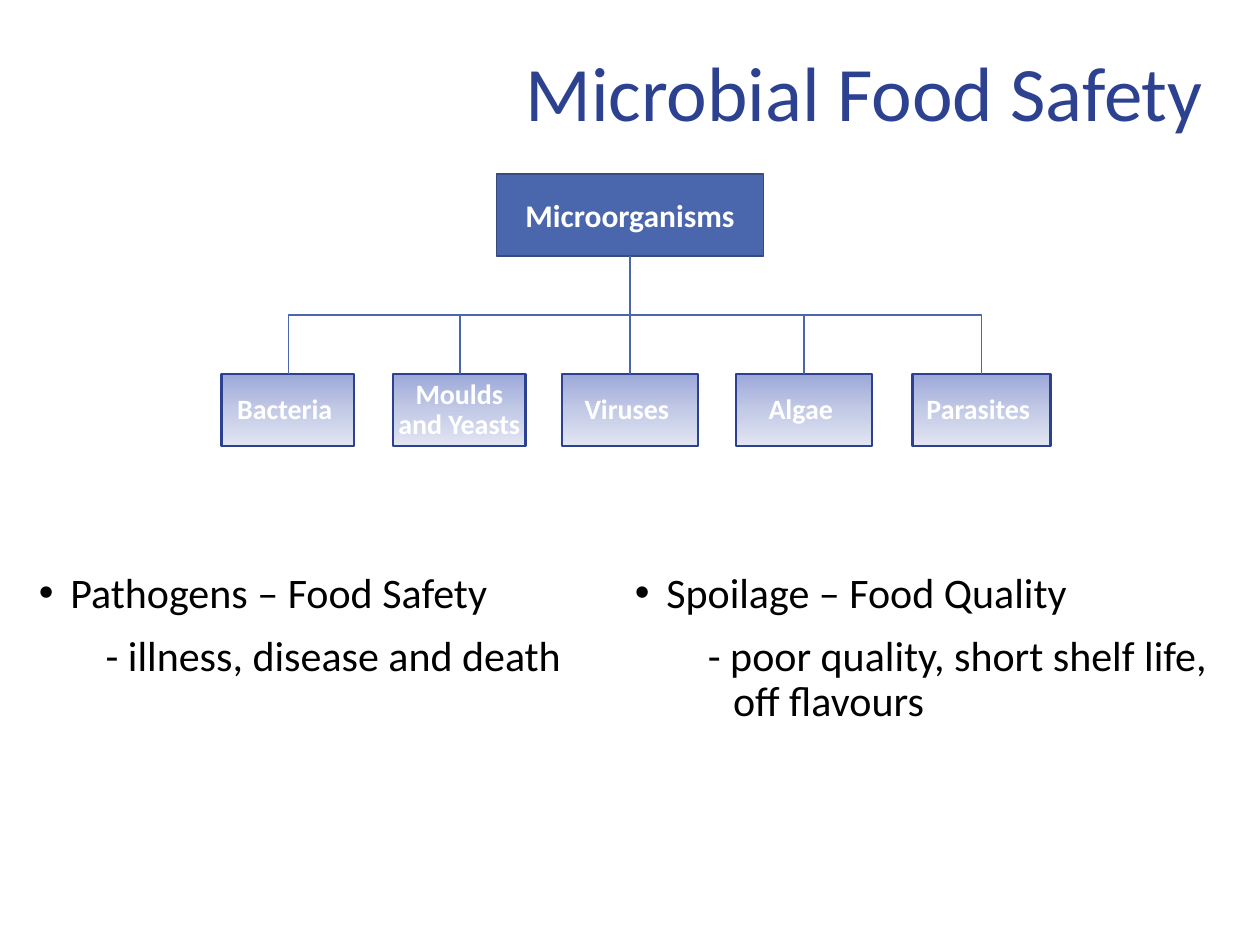
from copy import deepcopy

from pptx import Presentation
from pptx.dml.color import RGBColor
from pptx.enum.shapes import MSO_CONNECTOR, MSO_SHAPE
from pptx.enum.text import MSO_ANCHOR, PP_ALIGN
from pptx.oxml.ns import qn
from pptx.oxml.xmlchemy import OxmlElement
from pptx.util import Inches, Pt

COLORS = {
    "title": "2D4191",
    "body": "000000",
    "label": "FFFFFF",
    "root": "4A66AC",
    "root_edge": "374B7F",
    "branch_edge": "2D4191",
    "connector": "4A66AC",
    "fade_top": "9CA8D9",
    "fade_middle": "C3CAE6",
    "fade_bottom": "E2E5F2",
}


def color(name):
    return RGBColor.from_string(COLORS[name])


def write(paragraph, text, *, size, ink, bold=False, align=PP_ALIGN.LEFT,
          spacing=0.9, before=0, margin=0, indent=0, bullet=None):
    """Fill a paragraph; margin and indent are in inches, before in points."""
    properties = paragraph._p.get_or_add_pPr()
    properties.set("marL", str(Inches(margin)))
    properties.set("indent", str(Inches(indent)))
    if bullet:
        bullet_font = OxmlElement("a:buFont")
        bullet_font.set("typeface", "Arial")
        mark = OxmlElement("a:buChar")
        mark.set("char", bullet)
        properties.extend([bullet_font, mark])
    paragraph.alignment = align
    paragraph.line_spacing = spacing
    paragraph.space_before = Pt(before)
    run = paragraph.add_run()
    run.text = text
    run.font.name = "Calibri"
    run.font.size = Pt(size)
    run.font.bold = bold
    run.font.color.rgb = color(ink)


class SlideBuilder:
    """Holds the slide and the shared look of its elements."""

    def __init__(self, slide):
        self.shapes = slide.shapes

    def text_box(self, left, top, width, height):
        box = self.shapes.add_textbox(
            Inches(left), Inches(top), Inches(width), Inches(height))
        box.text_frame.word_wrap = True
        return box.text_frame

    def title(self, text):
        frame = self.text_box(1.03, 0.39, 8.62, 1.45)
        write(frame.paragraphs[0], text, size=44, ink="title",
              align=PP_ALIGN.RIGHT)

    def point(self, left, width, height, heading, detail, margin, indent):
        """Bulleted heading with an indented detail below it."""
        frame = self.text_box(left, 4.49, width, height)
        write(frame.paragraphs[0], heading, size=24, ink="body",
              margin=0.25, indent=-0.25, bullet="•")
        write(frame.add_paragraph(), detail, size=24, ink="body", before=10,
              margin=margin, indent=indent)

    def box(self, left, top, width, height, text, *, size, edge, edge_width,
            spacing=1.0, inset=0.1):
        box = self.shapes.add_shape(
            MSO_SHAPE.RECTANGLE,
            Inches(left), Inches(top), Inches(width), Inches(height))
        box.shadow.inherit = False
        box.line.color.rgb = color(edge)
        box.line.width = Pt(edge_width)
        frame = box.text_frame
        frame.word_wrap = True
        frame.vertical_anchor = MSO_ANCHOR.MIDDLE
        frame.margin_left = frame.margin_right = Inches(inset)
        frame.margin_top = frame.margin_bottom = Inches(inset / 2)
        write(frame.paragraphs[0], text, size=size, ink="label", bold=True,
              align=PP_ALIGN.CENTER, spacing=spacing)
        return box

    def root(self, text):
        root = self.box(3.94, 1.38, 2.12, 0.65, text, size=18,
                        edge="root_edge", edge_width=1)
        root.fill.solid()
        root.fill.fore_color.rgb = color("root")

    def branch(self, left, width, text):
        branch = self.box(left, 2.97, width, 0.57, text, size=16,
                          edge="branch_edge", edge_width=1.5,
                          spacing=0.9, inset=0.01)
        self.fade(branch)

    def fade(self, shape):
        """Three-stop gradient running from top to bottom."""
        shape.fill.gradient()
        shape.fill.gradient_angle = 270
        first = shape._element.spPr.find(".//" + qn("a:gs"))
        middle = deepcopy(first)
        middle.set("pos", "50000")
        first.addnext(middle)
        names = ("fade_top", "fade_middle", "fade_bottom")
        for stop, name in zip(shape.fill.gradient_stops, names):
            stop.color.rgb = color(name)

    def elbow(self, start_x, start_y, end_x, end_y):
        elbow = self.shapes.add_connector(
            MSO_CONNECTOR.ELBOW, Inches(start_x), Inches(start_y),
            Inches(end_x), Inches(end_y))
        elbow.line.color.rgb = color("connector")
        elbow.line.width = Pt(1)
        properties = elbow._element.spPr
        properties.append(OxmlElement("a:effectLst"))
        return properties

    def trunk(self, start_x, start_y, end_x, end_y):
        """Elbow that runs down, left, then down: a quarter-turned frame."""
        middle_x, middle_y = (start_x + end_x) / 2, (start_y + end_y) / 2
        half_width, half_height = (end_y - start_y) / 2, (start_x - end_x) / 2
        properties = self.elbow(middle_x - half_width, middle_y - half_height,
                                middle_x + half_width, middle_y + half_height)
        properties.find(qn("a:xfrm")).set("rot", str(90 * 60000))

    def arm(self, start_x, end_x):
        """Single-bend elbow along the bus and down to a branch."""
        properties = self.elbow(start_x, 2.5, end_x, 2.97)
        properties.find(qn("a:prstGeom")).set("prst", "bentConnector2")


def main():
    presentation = Presentation()
    presentation.slide_width = Inches(10)
    presentation.slide_height = Inches(7.5)
    builder = SlideBuilder(
        presentation.slides.add_slide(presentation.slide_layouts[6]))

    builder.title("Microbial Food Safety")
    builder.point(0.21, 4.63, 1.05, "Pathogens – Food Safety",
                  "- illness, disease and death", margin=0.53, indent=0)
    builder.point(4.94, 5, 1.33, "Spoilage – Food Quality",
                  "- poor quality, short shelf life, off flavours",
                  margin=0.78, indent=-0.2)
    builder.root("Microorganisms")
    for left, width, organism in (
        (7.24, 1.10, "Parasites "),
        (5.84, 1.08, "Algae "),
        (4.46, 1.08, "Viruses "),
        (3.12, 1.05, "Moulds and Yeasts"),
        (1.76, 1.05, "Bacteria "),
    ):
        builder.branch(left, width, organism)

    builder.trunk(5, 2.03, 3.65, 2.97)
    for start_x, end_x in ((3.8, 2.29), (4.02, 5), (5, 6.38), (6.38, 7.79)):
        builder.arm(start_x, end_x)
    presentation.save("out.pptx")


if __name__ == "__main__":
    main()
